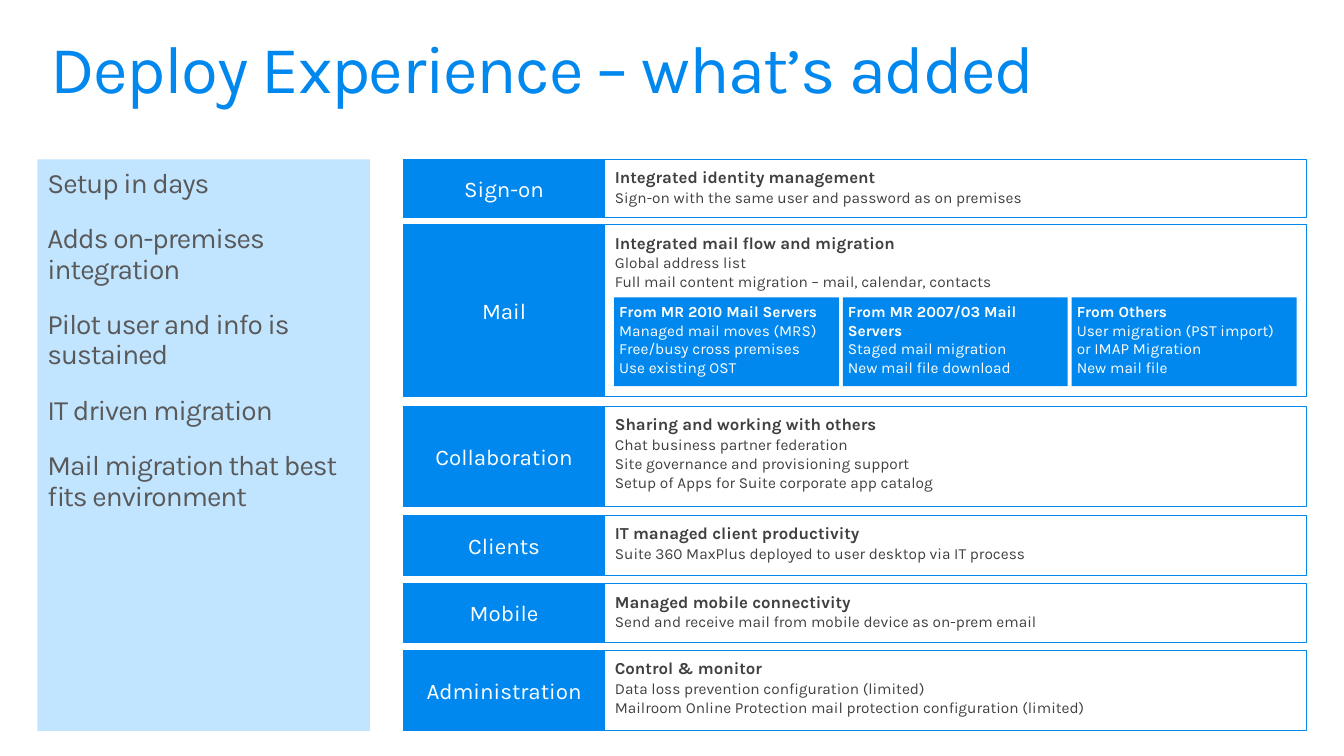
from lxml.etree import SubElement
from pptx import Presentation
from pptx.dml.color import RGBColor
from pptx.enum.shapes import MSO_SHAPE as Shape
from pptx.enum.text import MSO_ANCHOR as Anchor, MSO_AUTO_SIZE as Auto, PP_ALIGN as Align
from pptx.oxml.ns import qn
from pptx.util import Inches, Pt

BLUE, PALE, WHITE = "0088EE", "C1E4FF", "FFFFFF"
DARK, GRAY = "404040", "595959"


def tint(code):
    return RGBColor.from_string(code)


class Deck:
    font = "Karla"

    def __init__(self, wide, high):
        self.prs = Presentation()
        self.prs.slide_width, self.prs.slide_height = Inches(wide), Inches(high)
        self.slide = self.prs.slides.add_slide(self.prs.slide_layouts[1])

    def place(self, item, box):
        item.left, item.top, item.width, item.height = map(Inches, box)

    def frame(self, item, inset, anchor=Anchor.TOP):
        text = item.text_frame
        text.word_wrap = True
        text.auto_size = Auto.NONE
        text.vertical_anchor = anchor
        text.margin_left = text.margin_right = Inches(inset)
        text.margin_top = text.margin_bottom = Inches(inset)
        return text

    def line(self, text, first, words, size, color, bold=False,
             align=Align.LEFT, lead=0.9, after=0, track=0):
        para = text.paragraphs[0] if first else text.add_paragraph()
        para.alignment = align
        para.line_spacing = lead
        para.space_before, para.space_after = Pt(0), Pt(after)
        run = para.add_run()
        run.text = words
        run.font.name, run.font.size, run.font.bold = self.font, Pt(size), bold
        run.font.color.rgb = tint(color)
        if track:
            run.font._element.set("spc", str(track))
        return para

    def title(self, words, box):
        item = self.slide.shapes.title
        self.place(item, box)
        text = self.frame(item, 0.1, Anchor.MIDDLE)
        self.line(text, True, words, 48, BLUE, track=-100)

    def points(self, lines, box):
        item = self.slide.placeholders[1]
        self.place(item, box)
        item.fill.solid()
        item.fill.fore_color.rgb = tint(PALE)
        text = self.frame(item, 0.1)
        for i, words in enumerate(lines):
            para = self.line(text, i == 0, words, 20, GRAY, after=18, track=-70)
            props = para._p.get_or_add_pPr()
            props.set("marL", "0")
            props.set("indent", "0")
            SubElement(props, qn("a:buNone"))

    def rect(self, box, fill=None, edge=None):
        item = self.slide.shapes.add_shape(Shape.RECTANGLE, *map(Inches, box))
        item.shadow.inherit = False
        if fill:
            item.fill.solid()
            item.fill.fore_color.rgb = tint(fill)
        else:
            item.fill.background()
        if edge:
            item.line.color.rgb = tint(edge)
            item.line.width = Pt(0.75)
        else:
            item.line.fill.background()
        return item

    def label(self, words, box):
        text = self.frame(self.rect(box, BLUE, BLUE), 0.07, Anchor.MIDDLE)
        text.margin_bottom = Inches(0.04)
        self.line(text, True, words, 16, WHITE, align=Align.CENTER)

    def panel(self, lines, box):
        text = self.frame(self.rect(box, edge=BLUE), 0.1)
        for i, words in enumerate(lines):
            size = 11 if i else 12
            self.line(text, i == 0, words, size, DARK, i == 0, after=0.15 * size)

    def card(self, lines, box):
        text = self.frame(self.rect(box, BLUE), 0.05)
        for i, words in enumerate(lines):
            self.line(text, i == 0, words, 11, WHITE, i == 0, lead=1)


ROWS = [
    ("Sign-on", 1.58, 0.58, [
        "Integrated identity management",
        "Sign-on with the same user and password as on premises"]),
    ("Mail", 2.23, 1.7, [
        "Integrated mail flow and migration",
        "Global address list",
        "Full mail content migration – mail, calendar, contacts"]),
    ("Collaboration", 4.03, 1, [
        "Sharing and working with others",
        "Chat business partner federation",
        "Site governance and provisioning support",
        "Setup of Apps for Suite corporate app catalog"]),
    ("Clients", 5.11, 0.6, [
        "IT managed client productivity",
        "Suite 360 MaxPlus deployed to user desktop via IT process"]),
    ("Mobile", 5.79, 0.58, [
        "Managed mobile connectivity",
        "Send and receive mail from mobile device as on-prem email"]),
    ("Administration", 6.45, 0.8, [
        "Control & monitor",
        "Data loss prevention configuration (limited)",
        "Mailroom Online Protection mail protection configuration (limited)"]),
]
CARDS = [
    ["From MR 2010 Mail Servers", "Managed mail moves (MRS)",
     "Free/busy cross premises", "Use existing OST"],
    ["From MR 2007/03 Mail Servers", "Staged mail migration",
     "New mail file download"],
    ["From Others", "User migration (PST import) or IMAP Migration",
     "New mail file"],
]
POINTS = [
    "Setup in days",
    "Adds on-premises integration",
    "Pilot user and info is sustained",
    "IT driven migration",
    "Mail migration that best fits environment",
]


def main():
    deck = Deck(13.33, 7.5)
    deck.title("Deploy Experience – what’s added", (0.4, 0.3, 12.19, 0.82))
    deck.points(POINTS, (0.37, 1.58, 3.3, 5.67))
    for name, top, high, lines in ROWS:
        deck.label(name, (4, top, 2, high))
        deck.panel(lines, (6, top, 6.96, high))
    for i, lines in enumerate(CARDS):
        deck.card(lines, (6.09 + 2.27 * i, 2.95, 2.23, 0.88))
    deck.prs.save("out.pptx")


if __name__ == "__main__":
    main()
